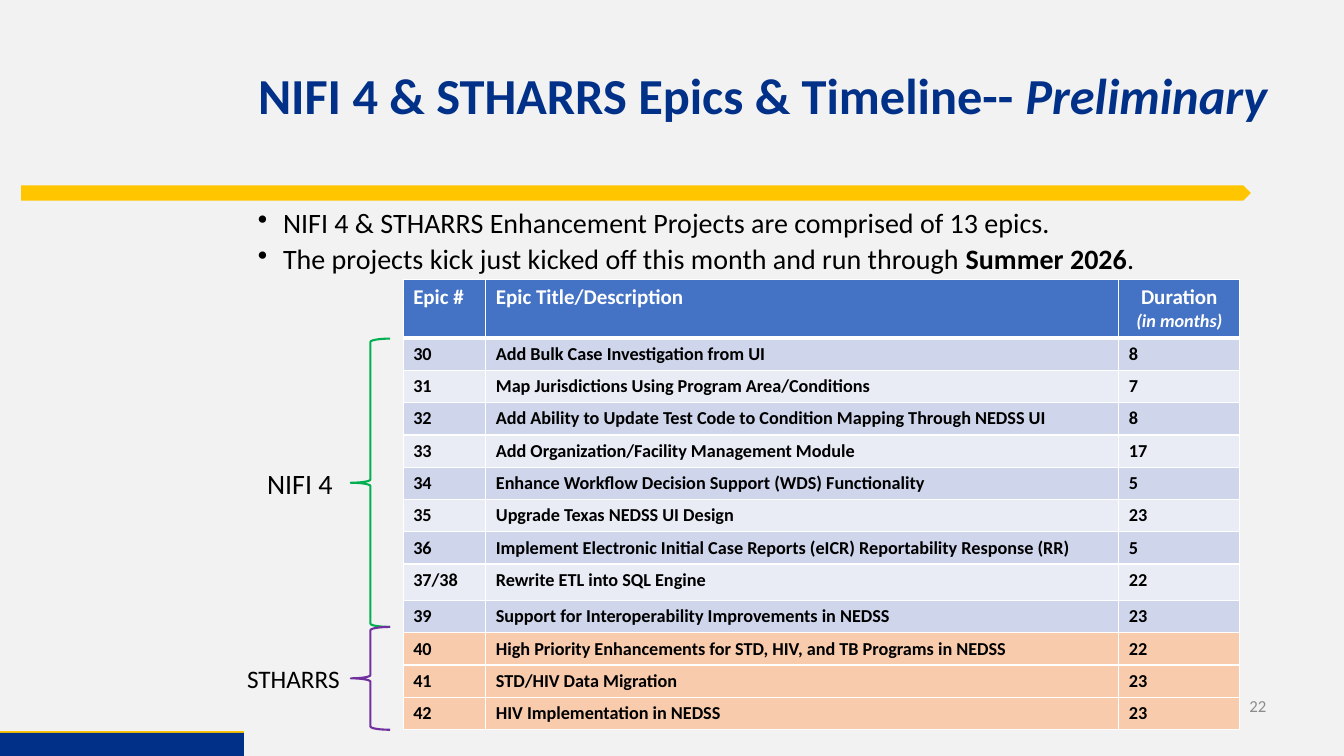
from dataclasses import dataclass
from typing import Any, NamedTuple

import pptx
import pptx.dml.color
import pptx.enum.shapes
import pptx.enum.text
import pptx.oxml
import pptx.oxml.ns
import pptx.util
from lxml import etree

SHAPE = pptx.enum.shapes.MSO_SHAPE
ALIGN = pptx.enum.text.PP_ALIGN
ANCHOR = pptx.enum.text.MSO_ANCHOR
SLIDE_WIDTH = pptx.util.Inches(13.33)
SLIDE_HEIGHT = pptx.util.Inches(7.5)


@dataclass(frozen=True)
class Theme:
    font: str = "Calibri"
    background: str = "F2F2F2"
    navy: str = "003087"
    gold: str = "FFC600"
    black: str = "000000"
    white: str = "FFFFFF"
    gray: str = "8C8C8C"
    header: str = "4472C4"
    bands: tuple[str, str] = ("CFD5EA", "E9EBF5")
    peach: str = "F8CBAD"
    green: str = "00B050"
    purple: str = "7030A0"
    title_size: int = 36
    body_size: int = 20
    small_label_size: int = 18
    header_size: int = 15
    cell_size: int = 13
    number_size: int = 12


THEME = Theme()


class Area(NamedTuple):
    """A rectangle in percent of the slide's width and height."""
    left: float
    top: float
    width: float
    height: float

    def emu(self) -> tuple[int, int, int, int]:
        return across(self.left), down(self.top), across(self.width), down(self.height)


class Run(NamedTuple):
    text: str
    bold: bool = False
    italic: bool = False
    size: int | None = None


class Epic(NamedTuple):
    number: str
    title: str
    months: int
    stharrs: bool = False


class Group(NamedTuple):
    name: str
    size: int
    color: str
    label: Area
    brace: Area


EPICS = [
    Epic("30", "Add Bulk Case Investigation from UI", 8),
    Epic("31", "Map Jurisdictions Using Program Area/Conditions", 7),
    Epic("32", "Add Ability to Update Test Code to Condition Mapping Through NEDSS UI", 8),
    Epic("33", "Add Organization/Facility Management Module", 17),
    Epic("34", "Enhance Workflow Decision Support (WDS) Functionality", 5),
    Epic("35", "Upgrade Texas NEDSS UI Design", 23),
    Epic("36", "Implement Electronic Initial Case Reports (eICR) Reportability Response (RR)", 5),
    Epic("37/38", "Rewrite ETL into SQL Engine", 22),
    Epic("39", "Support for Interoperability Improvements in NEDSS", 23),
    Epic("40", "High Priority Enhancements for STD, HIV, and TB Programs in NEDSS", 22, True),
    Epic("41", "STD/HIV Data Migration", 23, True),
    Epic("42", "HIV Implementation in NEDSS", 23, True),
]
GROUPS = [
    Group("NIFI 4", THEME.body_size, THEME.green,
          Area(18.53, 61.07, 7.58, 5.87), Area(26.1, 44.8, 2.93, 38.13)),
    Group("STHARRS", THEME.small_label_size, THEME.purple,
          Area(17.55, 87.07, 8.55, 5.33), Area(26.1, 82.93, 2.93, 13.6)),
]
TABLE_AREA = Area(30, 36.93, 62.25, 59.6)
COLUMN_WIDTHS = (6.15, 47.1, 9)
HEADER_HEIGHT, ROW_HEIGHT, TALL_ROW_HEIGHT = 7.8, 4.27, 4.83
FOOTER = Area(0, 96.93, 18.15, 3.07)


def across(percent: float) -> int:
    return round(SLIDE_WIDTH * percent / 100)


def down(percent: float) -> int:
    return round(SLIDE_HEIGHT * percent / 100)


def rgb(color: str) -> pptx.dml.color.RGBColor:
    return pptx.dml.color.RGBColor.from_string(color)


def write_text(frame: Any, paragraphs: list[list[Run]], *, size: int, color: str = THEME.black,
               align: ALIGN = ALIGN.LEFT, anchor: ANCHOR = ANCHOR.TOP, bullet: bool = False,
               line_spacing: float | None = None, gap: int = 0) -> None:
    """Fill a text frame; gap is the space in points between paragraphs."""
    frame.word_wrap = True
    for index, runs in enumerate(paragraphs):
        paragraph = frame.add_paragraph() if index else frame.paragraphs[0]
        if bullet:
            properties = paragraph._p.get_or_add_pPr()
            indent = pptx.util.Inches(0.25)
            properties.set("marL", str(indent))
            properties.set("indent", str(-indent))
            etree.SubElement(properties, pptx.oxml.ns.qn("a:buChar")).set("char", "•")
        paragraph.alignment = align
        paragraph.line_spacing = line_spacing
        if index:
            paragraph.space_before = pptx.util.Pt(gap)
        for part in runs:
            run = paragraph.add_run()
            run.text = part.text
            run.font.name = THEME.font
            run.font.size = pptx.util.Pt(part.size or size)
            run.font.bold, run.font.italic = part.bold, part.italic
            run.font.color.rgb = rgb(color)
    frame.vertical_anchor = anchor


def add_text(slide: Any, area: Area, paragraphs: list[list[Run]], **text_format: Any) -> None:
    write_text(slide.shapes.add_textbox(*area.emu()).text_frame, paragraphs, **text_format)


def add_shape(slide: Any, kind: SHAPE, area: Area, *, fill: str | None = None,
              line: str | None = None) -> None:
    shape = slide.shapes.add_shape(kind, *area.emu())
    shape.shadow.inherit = False
    for paint, color in ((shape.fill, fill), (shape.line.fill, line)):
        if color:
            paint.solid()
            paint.fore_color.rgb = rgb(color)
        else:
            paint.background()
    if line:
        shape.line.width = pptx.util.Pt(1.5)


def style_cell(cell: Any, fill: str, top: int = 1, bottom: int = 1) -> None:
    """Set a cell's fill and white borders, with widths in points."""
    properties = cell._tc.get_or_add_tcPr()
    for side, width in (("L", 1), ("R", 1), ("T", top), ("B", bottom)):
        properties.append(pptx.oxml.parse_xml(
            f'<a:ln{side} {pptx.oxml.ns.nsdecls("a")} w="{pptx.util.Pt(width)}"><a:solidFill>'
            f'<a:srgbClr val="{THEME.white}"/></a:solidFill></a:ln{side}>'))
    cell.fill.solid()
    cell.fill.fore_color.rgb = rgb(fill)


def add_epic_table(slide: Any) -> None:
    table = slide.shapes.add_table(
        len(EPICS) + 1, len(COLUMN_WIDTHS), *TABLE_AREA.emu()).table
    for column, width in zip(table.columns, COLUMN_WIDTHS):
        column.width = across(width)
    table.rows[0].height = down(HEADER_HEIGHT)
    headings = [[[Run("Epic #", True)]], [[Run("Epic Title/Description", True)]],
                [[Run("Duration", True)], [Run("(in months)", True, True, THEME.cell_size)]]]
    for index, heading in enumerate(headings):
        cell = table.cell(0, index)
        write_text(cell.text_frame, heading, size=THEME.header_size, color=THEME.white,
                   align=ALIGN.CENTER if len(heading) > 1 else ALIGN.LEFT)
        style_cell(cell, THEME.header, bottom=3)
    for row, epic in enumerate(EPICS, start=1):
        table.rows[row].height = down(TALL_ROW_HEIGHT if "/" in epic.number else ROW_HEIGHT)
        fill = THEME.peach if epic.stharrs else THEME.bands[(row - 1) % 2]
        for index, value in enumerate((epic.number, epic.title, str(epic.months))):
            cell = table.cell(row, index)
            write_text(cell.text_frame, [[Run(value, True)]], size=THEME.cell_size)
            style_cell(cell, fill, top=3 if row == 1 else 1)


def add_frame(slide: Any) -> None:
    """Draw the gold arrow bar, the footer block and the slide number."""
    add_shape(slide, SHAPE.PENTAGON, Area(1.58, 24.53, 91.5, 2), fill=THEME.gold)
    left, top, width, _ = FOOTER.emu()
    rule = slide.shapes.add_connector(
        pptx.enum.shapes.MSO_CONNECTOR.STRAIGHT, left, top, left + width, top)
    rule.line.color.rgb = rgb(THEME.gold)
    rule.line.width = pptx.util.Pt(3)
    etree.SubElement(rule._element.spPr, pptx.oxml.ns.qn("a:effectLst"))
    add_shape(slide, SHAPE.RECTANGLE, FOOTER, fill=THEME.navy)
    add_text(slide, Area(91.37, 90.67, 3.6, 5.33), [[Run("22")]], size=THEME.number_size,
             color=THEME.gray, align=ALIGN.RIGHT, anchor=ANCHOR.MIDDLE)


def main() -> None:
    presentation = pptx.Presentation()
    presentation.slide_width, presentation.slide_height = SLIDE_WIDTH, SLIDE_HEIGHT
    slide = presentation.slides.add_slide(presentation.slide_layouts.get_by_name("Title Only"))
    slide.background.fill.solid()
    slide.background.fill.fore_color.rgb = rgb(THEME.background)
    add_frame(slide)
    title = slide.shapes.title
    title.left, title.top, title.width, title.height = Area(18.45, 3.6, 77.5, 18.67).emu()
    write_text(title.text_frame, [[Run("NIFI 4 & STHARRS Epics & Timeline-- ", True),
                                   Run("Preliminary", True, True)]],
               size=THEME.title_size, color=THEME.navy, anchor=ANCHOR.MIDDLE, line_spacing=0.9)
    add_epic_table(slide)
    add_text(slide, Area(18.45, 26.53, 73.73, 10.4), [
        [Run("NIFI 4 & STHARRS Enhancement Projects are comprised of 13 epics.")],
        [Run("The projects kick just kicked off this month and run through "),
         Run("Summer 2026", True), Run(".")],
    ], size=THEME.body_size, bullet=True, gap=2)
    for group in GROUPS:
        add_shape(slide, SHAPE.LEFT_BRACE, group.brace, line=group.color)
        add_text(slide, group.label, [[Run(group.name)]], size=group.size, align=ALIGN.CENTER)
    presentation.save("out.pptx")


if __name__ == "__main__":
    main()
